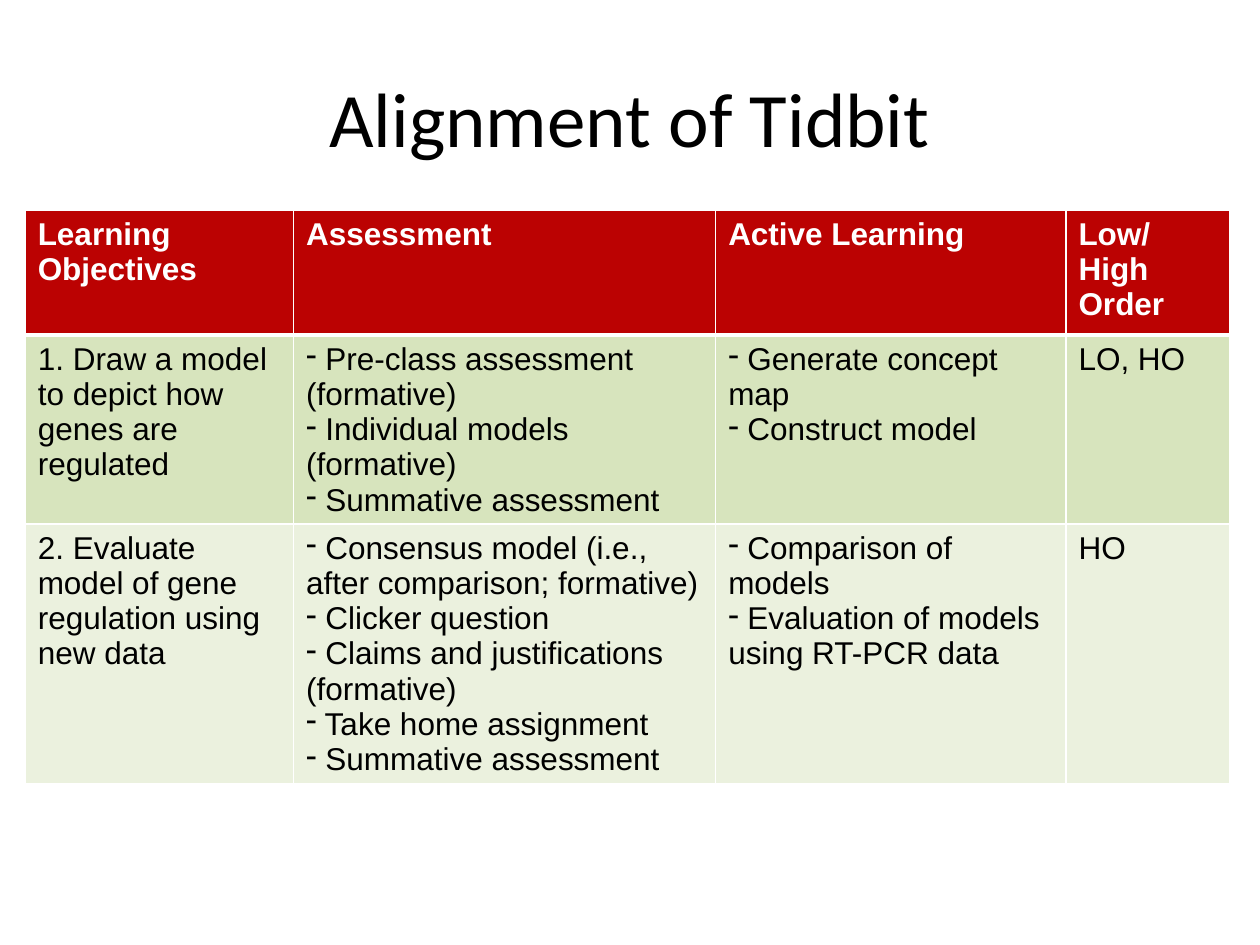
from lxml.etree import SubElement
from pptx import Presentation
from pptx.dml.color import RGBColor
from pptx.enum.text import MSO_ANCHOR, PP_ALIGN
from pptx.oxml import parse_xml
from pptx.oxml.ns import nsdecls, qn
from pptx.util import Inches, Pt

WHITE = RGBColor(0xFF, 0xFF, 0xFF)
BLACK = RGBColor(0, 0, 0)
RED = RGBColor(0xBB, 0x02, 0x02)
GREEN = RGBColor(0xD7, 0xE4, 0xBD)
PALE_GREEN = RGBColor(0xEB, 0xF1, 0xDE)

COLUMN_WIDTHS = [2.13, 3.35, 2.78, 1.3]
ROW_HEIGHTS = [0.99, 1.49, 2.06]
ROW_FILLS = [RED, GREEN, PALE_GREEN]
BULLETED_COLUMNS = (1, 2)

ROWS = [
    [["Learning Objectives"], ["Assessment"], ["Active Learning"], ["Low/High Order"]],
    [
        ["1. Draw a model to depict how genes are regulated"],
        ["Pre-class assessment (formative)", "Individual models (formative)",
         "Summative assessment"],
        ["Generate concept map", "Construct model"],
        ["LO, HO"],
    ],
    [
        ["2. Evaluate model of gene regulation using new data"],
        ["Consensus model (i.e., after comparison; formative)", "Clicker question",
         "Claims and justifications (formative)", "Take home assignment",
         "Summative assessment"],
        ["Comparison of models", "Evaluation of models using RT-PCR data"],
        ["HO"],
    ],
]


def add_span(para, text, font, size, color, bold=False):
    span = para.add_run()
    span.text = text
    span.font.name = font
    span.font.size = Pt(size)
    span.font.bold = bold
    span.font.color.rgb = color


def add_title(page, text):
    box = page.shapes.title
    box.left, box.top = Inches(0.5), Inches(0.3)
    box.width, box.height = Inches(9), Inches(1.25)
    box.text_frame.vertical_anchor = MSO_ANCHOR.MIDDLE
    para = box.text_frame.paragraphs[0]
    para.alignment = PP_ALIGN.CENTER
    add_span(para, text, "Calibri", 44, BLACK)


def set_borders(cell, top, bottom):
    """Draw white cell edges; top and bottom are widths in points."""
    properties = cell._tc.get_or_add_tcPr()
    edges = {"lnL": 1, "lnR": 1, "lnT": top, "lnB": bottom}
    for position, (edge, width) in enumerate(edges.items()):
        properties.insert(position, parse_xml(
            f'<a:{edge} {nsdecls("a")} w="{Pt(width)}"><a:solidFill>'
            f'<a:srgbClr val="{WHITE}"/></a:solidFill></a:{edge}>'))


def set_dash(para):
    """Give a paragraph a dash bullet with no hanging indent."""
    properties = para._p.get_or_add_pPr()
    properties.set("marL", "0")
    properties.set("indent", "0")
    SubElement(properties, qn("a:buChar")).set("char", "-")


def fill_cell(cell, lines, header, bulleted):
    frame = cell.text_frame
    for index, line in enumerate(lines):
        para = frame.add_paragraph() if index else frame.paragraphs[0]
        if bulleted:
            set_dash(para)
            line = " " + line
        add_span(para, line, "Arial", 18, WHITE if header else BLACK, header)


def add_alignment_table(page):
    frame = page.shapes.add_table(
        len(ROWS), len(COLUMN_WIDTHS), Inches(0.2), Inches(1.67),
        Inches(sum(COLUMN_WIDTHS)), Inches(sum(ROW_HEIGHTS)))
    table = frame.table
    for column, width in zip(table.columns, COLUMN_WIDTHS):
        column.width = Inches(width)
    for r, (row, height) in enumerate(zip(table.rows, ROW_HEIGHTS)):
        row.height = Inches(height)
        for c, lines in enumerate(ROWS[r]):
            cell = table.cell(r, c)
            cell.fill.solid()
            cell.fill.fore_color.rgb = ROW_FILLS[r]
            set_borders(cell, top=3 if r == 1 else 1, bottom=3 if r == 0 else 1)
            fill_cell(cell, lines, r == 0, r > 0 and c in BULLETED_COLUMNS)


def main():
    deck = Presentation()
    deck.slide_width, deck.slide_height = Inches(10), Inches(7.5)
    page = deck.slides.add_slide(deck.slide_layouts[5])
    add_alignment_table(page)
    add_title(page, "Alignment of Tidbit")
    deck.save("out.pptx")


if __name__ == "__main__":
    main()
